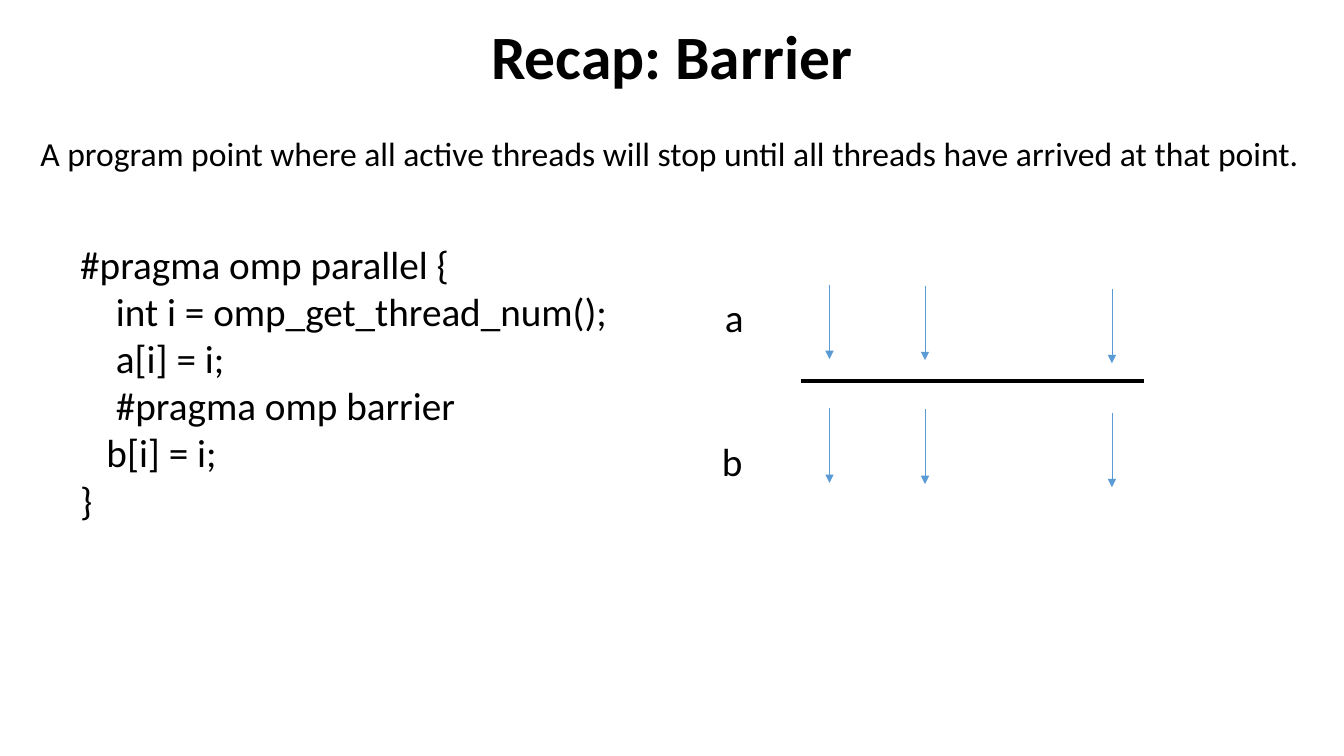
from lxml.etree import SubElement
from pptx import Presentation
from pptx.dml.color import RGBColor
from pptx.enum.shapes import MSO_CONNECTOR as CONN
from pptx.enum.text import MSO_ANCHOR as ANCHOR, PP_ALIGN as ALIGN
from pptx.oxml.ns import qn
from pptx.util import Pt

PX = 9525
COLORS = {"ink": "000000", "arrow": "5B9BD5"}
CODE = [
    ("#pragma omp parallel {", 0),
    ("int i = omp_get_thread_num();", 34),
    ("a[i] = i;", 34),
    ("#pragma omp barrier", 34),
    ("b[i] = i;", 25),
    ("}", 0),
]
THREADS = [(790, 271), (881, 272), (1059, 275)]
ARROW_LENGTH = 71
PHASE_STEP = 118


def add_text(s, box, lines, size, anchor=ANCHOR.TOP):
    """Add a text box of (text, indent) lines and return its paragraphs."""
    tf = s.shapes.add_textbox(*(v * PX for v in box)).text_frame
    tf.word_wrap = True
    tf.vertical_anchor = anchor
    tf.text = "\n".join(text for text, _ in lines)
    for p, (_, indent) in zip(tf.paragraphs, lines):
        p.font.size = Pt(size)
        p.font.name = "Calibri"
        p.font.color.rgb = RGBColor.from_string(COLORS["ink"])
        if indent:
            p._p.get_or_add_pPr().set("marL", str(indent * PX))
    return tf.paragraphs


def add_line(s, start, end, color, width, arrow=False):
    """Add a straight line, with an arrowhead at its end if asked."""
    c = s.shapes.add_connector(CONN.STRAIGHT, *(v * PX for v in start + end))
    c.line.color.rgb = RGBColor.from_string(COLORS[color])
    c.line.width = Pt(width)
    if arrow:
        SubElement(c.line._get_or_add_ln(), qn("a:tailEnd"), type="triangle")
    SubElement(c._element.spPr, qn("a:effectLst"))


def add_threads(s, offset):
    """Add one arrow per thread, moved down by the offset."""
    for x, y in THREADS:
        top = y + offset
        add_line(s, (x, top), (x, top + ARROW_LENGTH), "arrow", 0.5, arrow=True)


def main():
    """Build the barrier slide."""
    prs = Presentation()
    prs.slide_width, prs.slide_height = 1280 * PX, 720 * PX
    s = prs.slides.add_slide(prs.slide_layouts[6])

    title = add_text(s, (88, 16, 1104, 81), [("Recap: Barrier", 0)], 44, ANCHOR.MIDDLE)[0]
    title.alignment = ALIGN.CENTER
    title.line_spacing = 0.9
    title.font.bold = True

    definition = (
        "A program point where all active threads will stop "
        "until all threads have arrived at that point."
    )
    add_text(s, (29, 122, 1240, 48), [(definition, 0)], 24)
    add_text(s, (67, 223, 536, 281), CODE, 28, ANCHOR.MIDDLE)

    add_threads(s, 0)
    add_line(s, (763, 363), (1090, 363), "ink", 2.75)
    add_threads(s, PHASE_STEP)
    add_text(s, (681, 275, 53, 55), [("a", 0)], 28)
    add_text(s, (678, 412, 56, 55), [("b", 0)], 28)
    prs.save("out.pptx")


if __name__ == "__main__":
    main()
